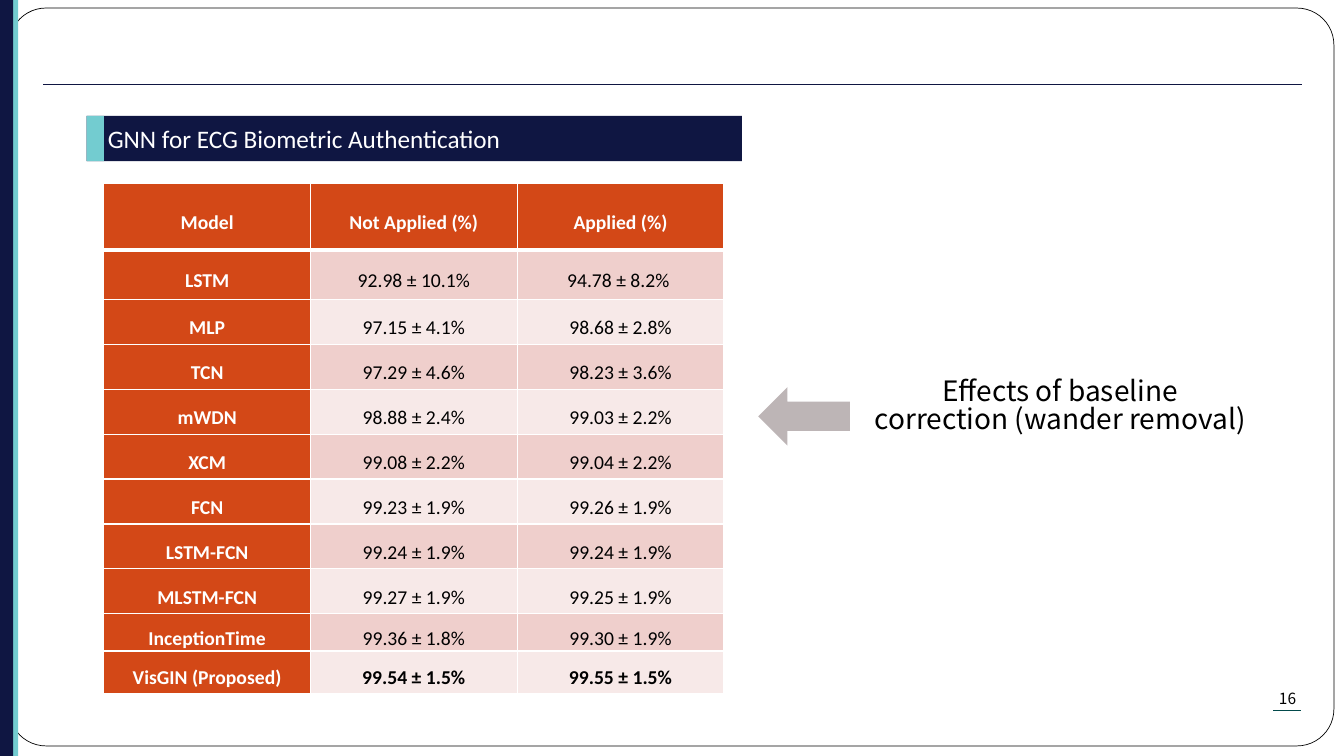
from dataclasses import dataclass

from lxml.etree import SubElement
from pptx import Presentation
from pptx.dml.color import RGBColor
from pptx.enum.shapes import MSO_CONNECTOR, MSO_SHAPE
from pptx.enum.text import MSO_ANCHOR, PP_ALIGN
from pptx.oxml.ns import qn
from pptx.util import Inches, Pt


@dataclass(frozen=True)
class Theme:
    navy: str = "0F1642"
    aqua: str = "73CCD0"
    teal: str = "024A4B"
    orange: str = "D34817"
    bands: tuple = ("EFCFCC", "F7E9E8")
    grey: str = "BDB5B6"
    white: str = "FFFFFF"
    black: str = "000000"
    latin: str = "Calibri"
    korean: str = "Noto Sans CJK KR"
    heading_size: int = 18
    message_size: int = 20
    table_size: int = 14
    number_size: int = 11


THEME = Theme()

# The page is a grid of 1333 columns by 750 rows
COLUMNS, ROWS = 1333, 750
PAGE_WIDTH, PAGE_HEIGHT = Inches(13.33), Inches(7.5)

RESULTS = [
    ("Model", "Not Applied (%)", "Applied (%)"),
    ("LSTM", "92.98 ± 10.1%", "94.78 ± 8.2% "),
    ("MLP", "97.15 ± 4.1%", "98.68 ± 2.8%"),
    ("TCN", "97.29 ± 4.6%", "98.23 ± 3.6%"),
    ("mWDN", "98.88 ± 2.4%", "99.03 ± 2.2%"),
    ("XCM", "99.08 ± 2.2%", "99.04 ± 2.2%"),
    ("FCN", "99.23 ± 1.9%", "99.26 ± 1.9%"),
    ("LSTM-FCN", "99.24 ± 1.9%", "99.24 ± 1.9%"),
    ("MLSTM-FCN", "99.27 ± 1.9%", "99.25 ± 1.9%"),
    ("InceptionTime", "99.36 ± 1.8%", "99.30 ± 1.9%"),
    ("VisGIN (Proposed)", "99.54 ± 1.5%", "99.55 ± 1.5%"),
]
RESULT_HEIGHTS = [66, 49] + [44.6] * 7 + [37, 42]


def across(columns):
    return round(PAGE_WIDTH * columns / COLUMNS)


def down(rows):
    return round(PAGE_HEIGHT * rows / ROWS)


def place(left, top, width, height):
    return across(left), down(top), across(width), down(height)


def paint(fill, colour):
    fill.solid()
    fill.fore_color.rgb = RGBColor.from_string(colour)


def apply_formats(target, formats):
    for name, value in formats.items():
        setattr(target, name, value)


def write(frame, text, size, font, colour, bold=False, **para_formats):
    para = frame.paragraphs[0]
    para.text = text
    apply_formats(para, para_formats)
    for span in para.runs:
        apply_formats(span.font, {"size": Pt(size), "name": font, "bold": bold})
        span.font.color.rgb = RGBColor.from_string(colour)


def add_block(page, kind, area, colour, outline=None):
    block = page.shapes.add_shape(kind, *place(*area))
    block.shadow.inherit = False
    paint(block.fill, colour)
    if outline:
        paint(block.line.fill, outline)
        block.line.width = Pt(0.5)
    else:
        block.line.fill.background()
    return block


def add_rule(page, left, right, row, colour, width):
    rule = page.shapes.add_connector(
        MSO_CONNECTOR.STRAIGHT, across(left), down(row), across(right), down(row))
    paint(rule.line.fill, colour)
    rule.line.width = Pt(width)
    SubElement(rule._element.spPr, qn("a:effectLst"))


def add_label(page, area, text, size, **para_formats):
    box = page.shapes.add_textbox(*place(*area))
    box.text_frame.word_wrap = True
    write(box.text_frame, text, size, THEME.korean, THEME.black,
          alignment=PP_ALIGN.CENTER, **para_formats)


def add_borders(cell, widths):
    properties = cell._tc.get_or_add_tcPr()
    for position, (side, width) in enumerate(widths.items()):
        border = SubElement(properties, qn(f"a:ln{side}"), w=str(Pt(width)))
        fill = SubElement(border, qn("a:solidFill"))
        SubElement(fill, qn("a:srgbClr"), val=THEME.white)
        properties.insert(position, border)


def add_results(page, area):
    frame = page.shapes.add_table(len(RESULTS), len(RESULTS[0]), *place(*area))
    table = frame.table
    for column in table.columns:
        column.width = across(area[2] / len(table.columns))
    for row, height in zip(table.rows, RESULT_HEIGHTS):
        row.height = down(height)
    last = len(RESULTS) - 1
    for y, values in enumerate(RESULTS):
        for x, value in enumerate(values):
            heading = x == 0 or y == 0
            cell = table.cell(y, x)
            apply_formats(cell, {
                "vertical_anchor": MSO_ANCHOR.MIDDLE,
                "margin_left": across(7), "margin_right": across(7),
                "margin_top": 0, "margin_bottom": 0})
            paint(cell.fill, THEME.orange if heading else THEME.bands[(y - 1) % 2])
            add_borders(cell, {"L": 1, "R": 1, "T": 3 if y == 1 else 1,
                               "B": 3 if y == 0 else 1})
            write(cell.text_frame, value, THEME.table_size, THEME.latin,
                  THEME.white if heading else THEME.black,
                  bold=heading or y == last,
                  alignment=PP_ALIGN.CENTER, line_spacing=1.5)


def add_heading(page, area, text):
    banner = add_block(page, MSO_SHAPE.RECTANGLE, area, THEME.navy)
    apply_formats(banner.text_frame, {
        "margin_left": across(21), "word_wrap": True,
        "vertical_anchor": MSO_ANCHOR.MIDDLE})
    write(banner.text_frame, text, THEME.heading_size, THEME.latin, THEME.white,
          alignment=PP_ALIGN.LEFT)
    left, top, _, height = area
    add_block(page, MSO_SHAPE.RECTANGLE, (left, top, 17, height), THEME.aqua)


def add_page_frame(page, number):
    border = add_block(page, MSO_SHAPE.ROUNDED_RECTANGLE, (9, 8, 1314, 732),
                       THEME.white, THEME.black)
    border.adjustments[0] = 0.05
    add_block(page, MSO_SHAPE.RECTANGLE, (5, 0, 13, ROWS), THEME.aqua)
    add_label(page, (1243, 679, 68, 29), number, THEME.number_size)
    add_rule(page, 1263, 1290, 705, THEME.teal, 0.5)
    add_rule(page, 43, 1291, 84, THEME.navy, 1)
    add_block(page, MSO_SHAPE.RECTANGLE, (0, 0, 13, ROWS), THEME.navy)


def main():
    deck = Presentation()
    deck.slide_width, deck.slide_height = PAGE_WIDTH, PAGE_HEIGHT
    page = deck.slides.add_slide(deck.slide_layouts[6])

    # Border, side stripes and page number
    add_page_frame(page, "16")

    # Heading and results
    add_heading(page, (86, 115, 650, 45), "GNN for ECG Biometric Authentication")
    add_results(page, (103, 182, 615, 504))

    # Message pointing at the results
    add_label(page, (854, 371, 395, 111),
              "Effects of baseline\vcorrection (wander removal)",
              THEME.message_size, line_spacing=0.84)
    add_block(page, MSO_SHAPE.LEFT_ARROW, (752, 384, 91, 58), THEME.grey)

    deck.save("out.pptx")


if __name__ == "__main__":
    main()
